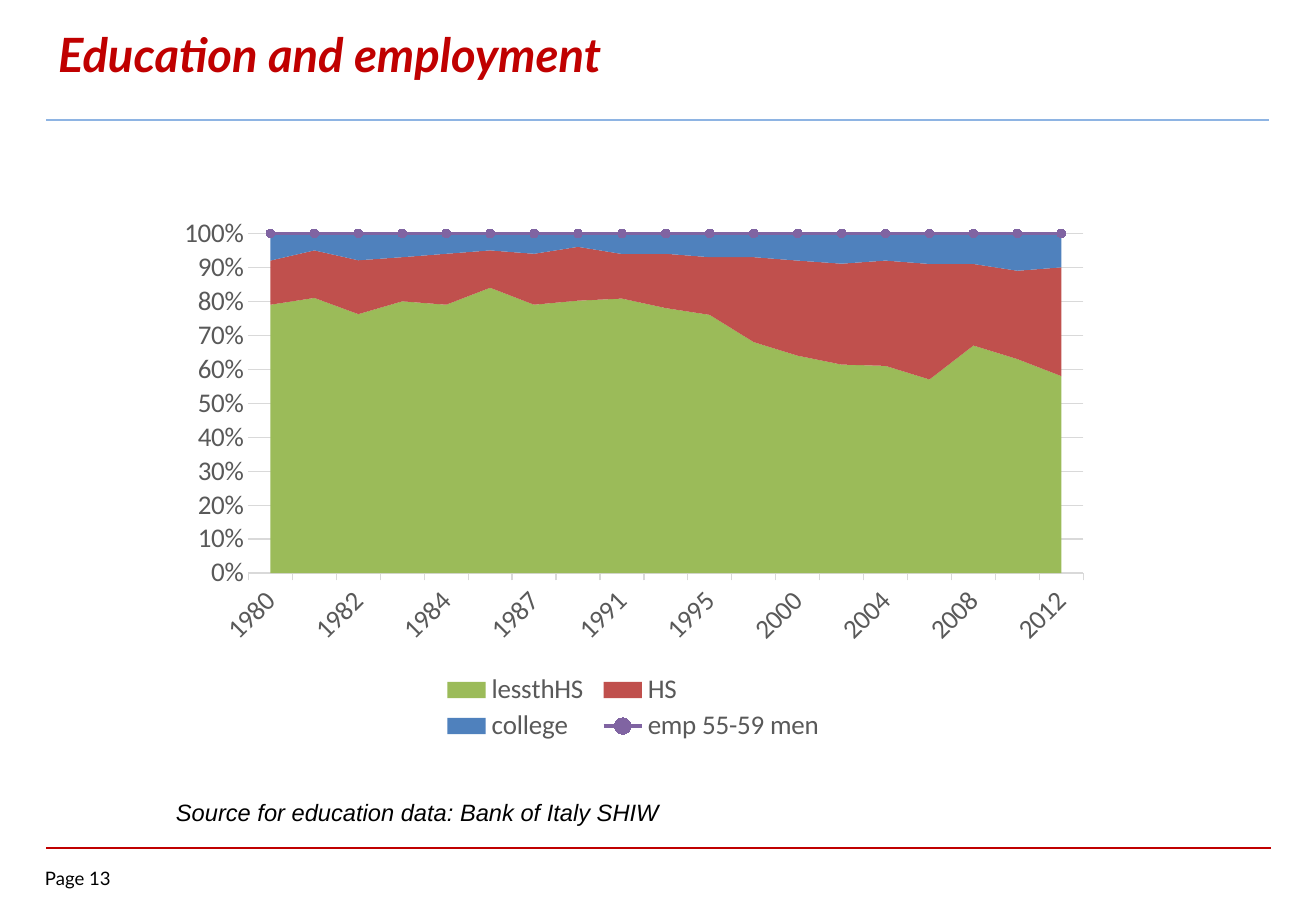
from lxml.etree import SubElement
from pptx import Presentation
from pptx.chart.data import CategoryChartData
from pptx.dml.color import RGBColor
from pptx.enum.chart import XL_CHART_TYPE, XL_LEGEND_POSITION, XL_MARKER_STYLE, XL_TICK_MARK
from pptx.enum.shapes import MSO_CONNECTOR
from pptx.enum.text import MSO_ANCHOR
from pptx.oxml import parse_xml
from pptx.oxml.ns import nsdecls, qn
from pptx.util import Inches, Pt

THEME = {
    "red": RGBColor.from_string("C00000"),
    "blue": RGBColor.from_string("8EB4E3"),
    "black": RGBColor.from_string("000000"),
    "label": RGBColor.from_string("595959"),
    "grid": RGBColor.from_string("D9D9D9"),
    "series": [RGBColor.from_string(c) for c in ("9BBB59", "C0504D", "4F81BD", "8064A2")],
    "title_size": Pt(28),
    "chart_size": Pt(16),
    "source_size": Pt(14),
    "page_size": Pt(11),
}


def add_text(text, x, y, w, h, size, font="Lato", color=THEME["black"], bold=False,
             italic=False, inset=(0.1, 0.05), anchor=MSO_ANCHOR.TOP):
    tf = s.shapes.add_textbox(Inches(x), Inches(y), Inches(w), Inches(h)).text_frame
    tf.word_wrap = True
    tf.vertical_anchor = anchor
    tf.margin_left = tf.margin_right = Inches(inset[0])
    tf.margin_top = tf.margin_bottom = Inches(inset[1])
    r = tf.paragraphs[0].add_run()
    r.text = text
    r.font.name, r.font.size, r.font.color.rgb = font, size, color
    r.font.bold, r.font.italic = bold, italic


def set_layout(parent, x, y, w, h, inner=False):
    target = '<c:layoutTarget val="inner"/>' if inner else ""
    layout = parse_xml(
        f'<c:layout {nsdecls("c")}><c:manualLayout>{target}'
        '<c:xMode val="edge"/><c:yMode val="edge"/>'
        f'<c:x val="{x}"/><c:y val="{y}"/><c:w val="{w}"/><c:h val="{h}"/>'
        '</c:manualLayout></c:layout>')
    for old in parent.findall(qn("c:layout")):
        parent.remove(old)
    before = parent.find(qn("c:legendPos"))
    parent.insert(0 if before is None else parent.index(before) + 1, layout)


prs = Presentation()
prs.slide_width, prs.slide_height = Inches(10.83), Inches(7.5)
s = prs.slides.add_slide(prs.slide_layouts[6])

for right, y, color, width in ((10.46, 6.98, "red", 1), (10.44, 0.99, "blue", 1.5)):
    rule = s.shapes.add_connector(
        MSO_CONNECTOR.STRAIGHT, Inches(0.38), Inches(y), Inches(right), Inches(y))
    rule.line.color.rgb = THEME[color]
    rule.line.width = Pt(width)
    SubElement(rule._element.spPr, qn("a:effectLst"))

add_text("Page 13", 0.37, 7.14, 0.73, 0.22, THEME["page_size"], inset=(0, 0))

data = CategoryChartData()
data.categories = [
    "1980", "1981", "1982", "1983", "1984", "1986", "1987", "1989", "1991", "1993",
    "1995", "1998", "2000", "2002", "2004", "2006", "2008", "2010", "2012"]
data.add_series("lessthHS", [79, 81, 77, 80, 79, 84, 79, 81, 80, 78,
                             76, 68, 64, 62, 61, 57, 67, 63, 58])
data.add_series("HS", [13, 14, 16, 13, 15, 11, 15, 16, 13, 16,
                       17, 25, 28, 30, 31, 34, 24, 26, 32])
data.add_series("college", [8, 5, 8, 7, 6, 5, 6, 4, 6, 6,
                            7, 7, 8, 9, 8, 9, 9, 11, 10])
data.add_series("emp 55-59 men", [0.74, 0.72, 0.7, 0.71, 0.69, 0.68, 0.67, 0.65, 0.66, 0.64,
                                  0.58, 0.52, 0.52, 0.53, 0.54, 0.56, 0.6, 0.66, 0.7])
chart = s.shapes.add_chart(XL_CHART_TYPE.AREA_STACKED_100, Inches(1.35), Inches(1.7),
                           Inches(7.72), Inches(4.44), data).chart
chart.has_title = False
chart.font.name, chart.font.size = "Calibri", THEME["chart_size"]
chart.font.color.rgb = THEME["label"]

years, shares = chart.category_axis, chart.value_axis
years.has_major_gridlines = False
years.major_tick_mark = XL_TICK_MARK.OUTSIDE
years.format.line.color.rgb = THEME["grid"]
years.format.line.width = Pt(0.75)
shares.has_major_gridlines = True
shares.major_gridlines.format.line.color.rgb = THEME["grid"]
shares.major_gridlines.format.line.width = Pt(0.75)
shares.major_tick_mark = XL_TICK_MARK.NONE
shares.format.line.fill.background()
shares.tick_labels.number_format = "0%"
shares.tick_labels.number_format_is_linked = False
for axis in (years, shares):
    axis.minor_tick_mark = XL_TICK_MARK.NONE
    font = axis.tick_labels.font
    font.name, font.size, font.color.rgb = "Calibri", THEME["chart_size"], THEME["label"]
years._element.find(qn("c:txPr")).find(qn("a:bodyPr")).set("rot", "-2700000")
shares._element.find(qn("c:crossBetween")).set("val", "between")

area = chart.plots[0]._element
line_plot = parse_xml(
    f'<c:lineChart {nsdecls("c")}><c:grouping val="percentStacked"/><c:varyColors val="0"/>'
    '<c:marker val="1"/><c:axId val="101"/><c:axId val="102"/></c:lineChart>')
line_plot.insert(2, area.findall(qn("c:ser"))[-1])
area.addnext(line_plot)
last_axis = shares._element
for tag, own, other, pos, crosses, extra in (
        ("catAx", 101, 102, "b", "autoZero", ""),
        ("valAx", 102, 101, "r", "max", '<c:crossBetween val="between"/>')):
    hidden = parse_xml(
        f'<c:{tag} {nsdecls("c")}><c:axId val="{own}"/>'
        '<c:scaling><c:orientation val="minMax"/></c:scaling><c:delete val="1"/>'
        f'<c:axPos val="{pos}"/><c:majorTickMark val="none"/><c:minorTickMark val="none"/>'
        f'<c:tickLblPos val="nextTo"/><c:crossAx val="{other}"/>'
        f'<c:crosses val="{crosses}"/>{extra}</c:{tag}>')
    last_axis.addnext(hidden)
    last_axis = hidden

areas, lines = chart.plots
areas.vary_by_categories = False
for series, color in zip(areas.series, THEME["series"]):
    series.format.fill.solid()
    series.format.fill.fore_color.rgb = color
    series.format.line.fill.background()
employment = lines.series[0]
employment.smooth = False
employment.format.line.color.rgb = THEME["series"][-1]
employment.format.line.width = Pt(2.25)
marker = employment.marker
marker.style, marker.size = XL_MARKER_STYLE.CIRCLE, 5
marker.format.fill.solid()
marker.format.fill.fore_color.rgb = THEME["series"][-1]
marker.format.line.color.rgb = THEME["series"][-1]

chart.has_legend = True
legend = chart.legend
legend.position = XL_LEGEND_POSITION.BOTTOM
legend.include_in_layout = False
legend.font.name, legend.font.size = "Calibri", THEME["chart_size"]
legend.font.color.rgb = THEME["label"]
set_layout(legend._element, 0.29, 0.86, 0.42, 0.14)
set_layout(area.getparent(), 0.09, 0.05, 0.89, 0.63, inner=True)

add_text("Education and employment", 0.38, 0.09, 9.92, 0.71, THEME["title_size"],
         color=THEME["red"], bold=True, italic=True, anchor=MSO_ANCHOR.MIDDLE)
add_text("Source for education data: Bank of Italy SHIW", 1.35, 6.52, 4.97, 0.34,
         THEME["source_size"], font="Arial", italic=True)

prs.save("out.pptx")
